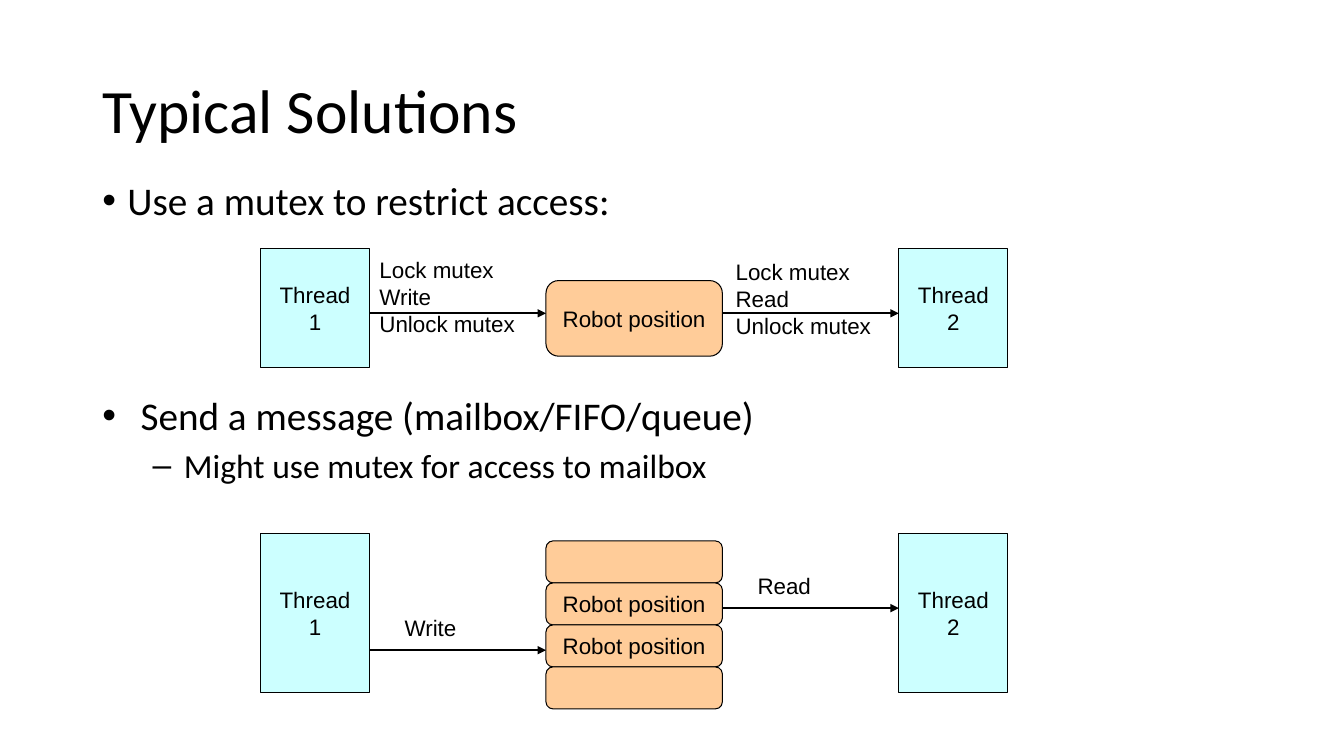
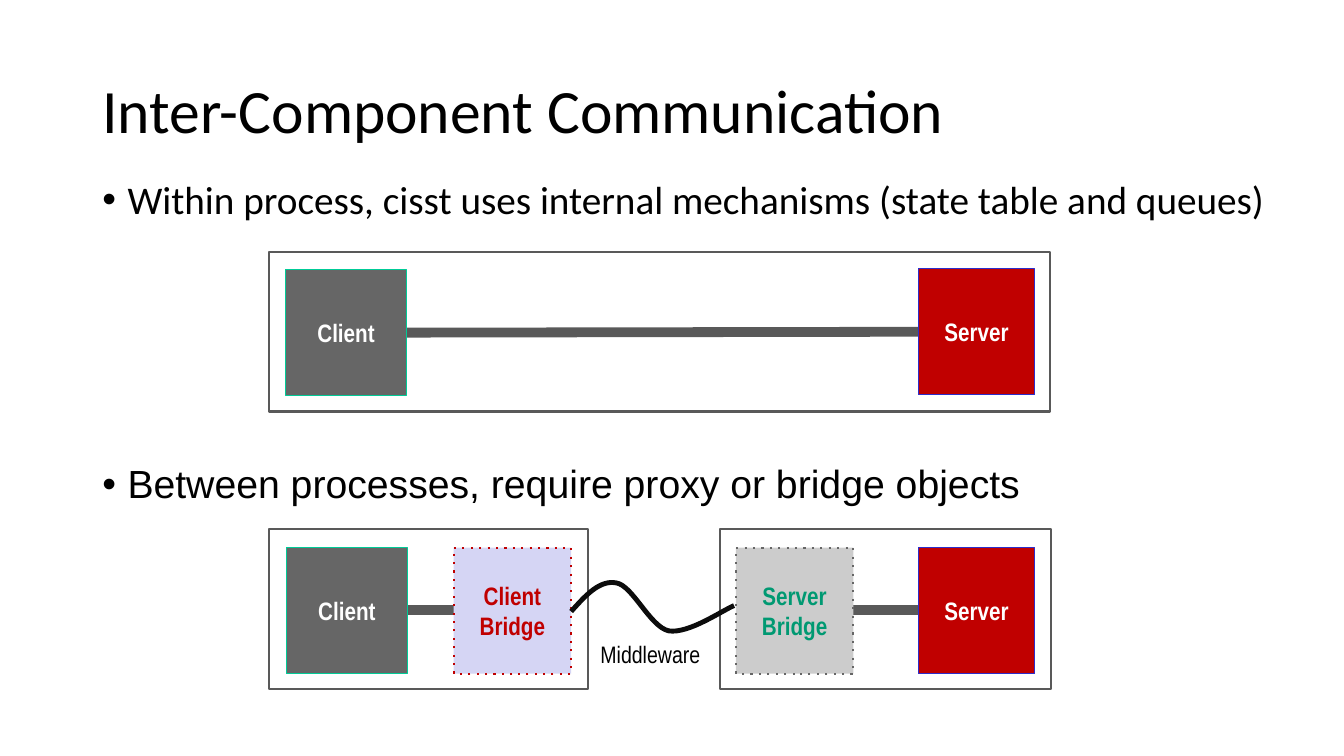
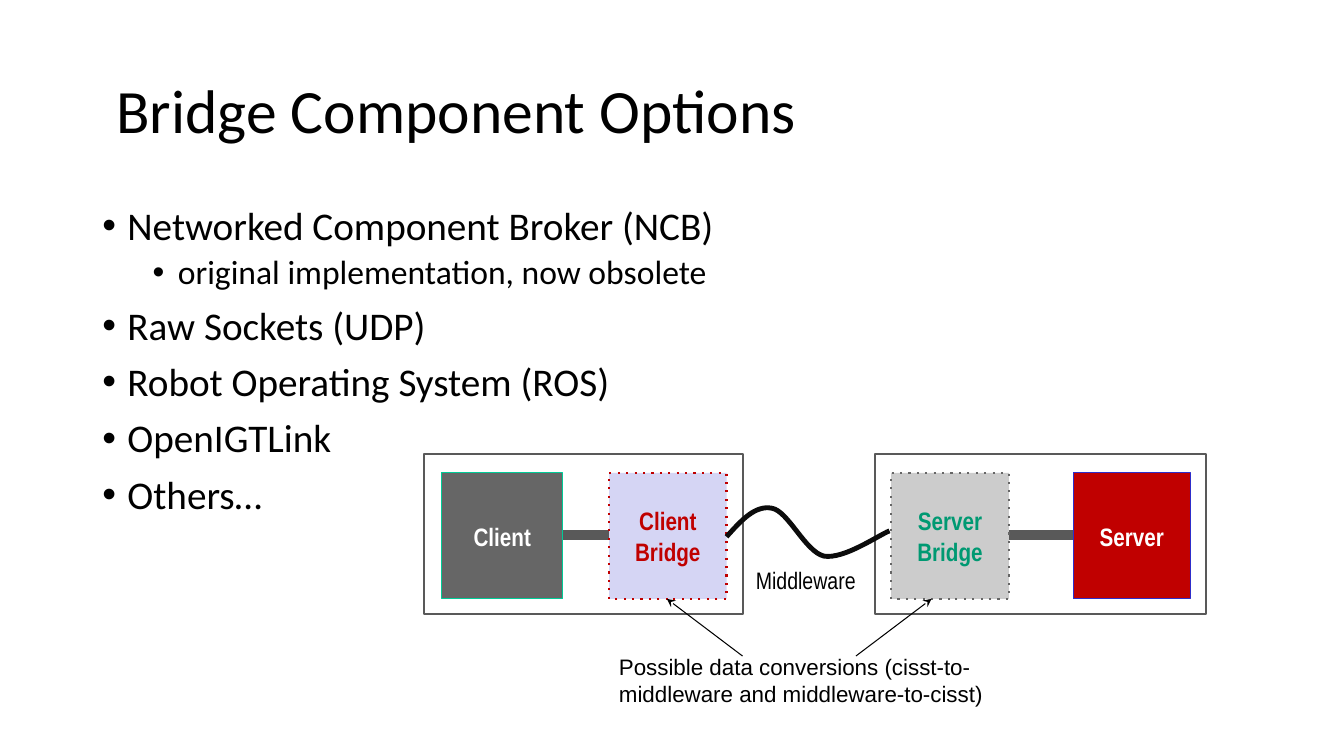
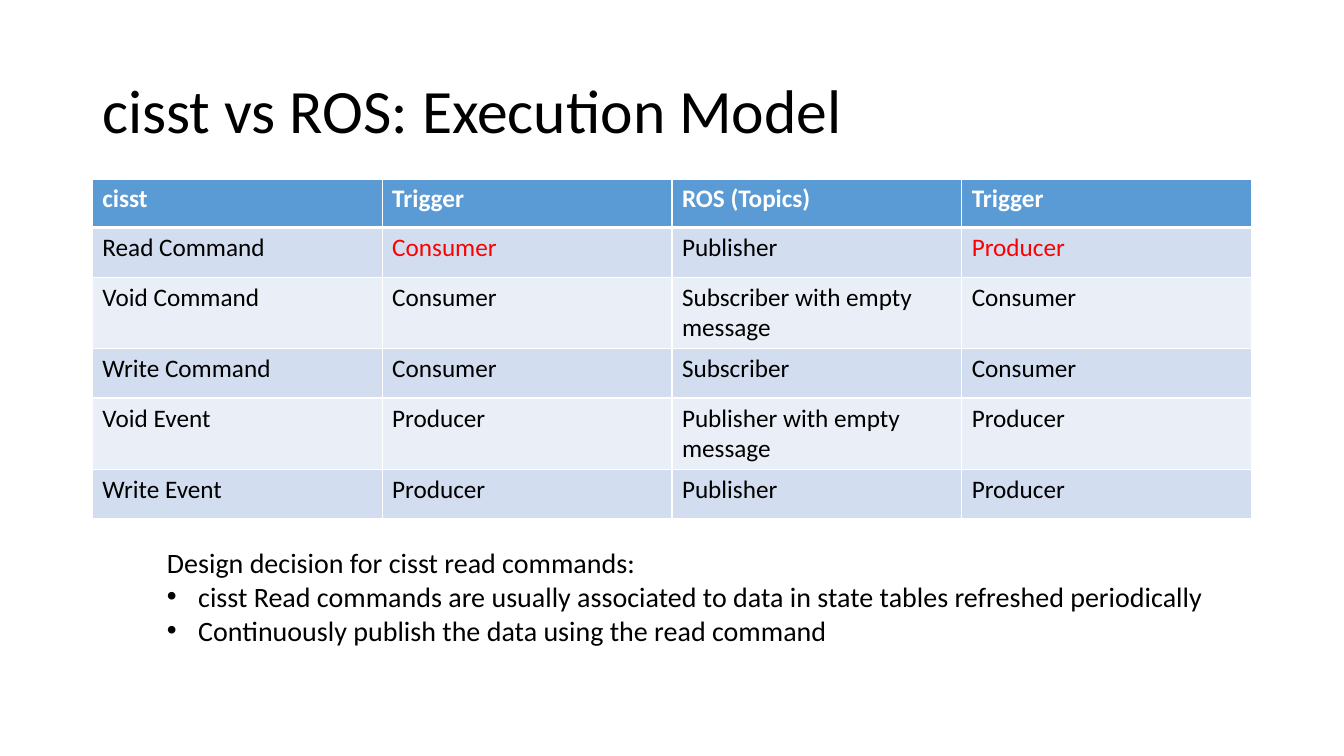
from itertools import pairwise

from lxml.etree import SubElement as Sub
from pptx import Presentation
from pptx.dml.color import RGBColor as RGB
from pptx.enum.dml import MSO_LINE as DASH
from pptx.enum.shapes import MSO_CONNECTOR as WIRE, MSO_SHAPE as FORM
from pptx.enum.text import MSO_ANCHOR as ANCHOR, PP_ALIGN as ALIGN
from pptx.oxml.ns import qn
from pptx.util import Inches, Pt

COLS, ROWS = 160, 90
UNIT = Inches(1 / 12)

HUES = {
    "ink": "000000", "paper": "FFFFFF", "aqua": "CCFFFF", "peach": "FFCC99",
    "wire": "595959", "gray": "666666", "mint": "00CB97", "red": "C00000",
    "blue": "2D2DCA", "ash": "CCCCCC", "green": "009972", "lilac": "D5D5F4",
    "curve": "0C0C0C", "head": "5B9BD5", "odd": "D2DEEF", "even": "EAEFF7",
    "alert": "FF0000",
}

FONTS = {
    "title": {"name": "Calibri", "size": Pt(44)},
    "body": {"name": "Calibri", "size": Pt(28)},
    "sub": {"name": "Calibri", "size": Pt(24)},
    "note": {"name": "Calibri", "size": Pt(20)},
    "cell": {"name": "Calibri", "size": Pt(18), "bold": False},
    "top": {"name": "Calibri", "size": Pt(18), "bold": True},
    "plain": {"name": "Arial", "size": Pt(16)},
    "wide": {"name": "Arial", "size": Pt(28)},
    "part": {"name": "Arial Narrow", "size": Pt(18), "bold": True},
    "slim": {"name": "Arial Narrow", "size": Pt(17)},
}

PARAS = {
    "none": {},
    "mid": {"alignment": ALIGN.CENTER},
    "title": {"line_spacing": 0.9},
    "body": {"line_spacing": 0.9, "space_before": Pt(10)},
    "sub": {"line_spacing": 0.9, "space_before": Pt(5)},
    "dash": {"space_before": Pt(4.8)},
    "far": {"line_spacing": 0.9, "space_before": Pt(173)},
}

KINDS = {
    "thread": (FORM.RECTANGLE, "aqua", "ink", 0.75, "plain", "ink"),
    "store": (FORM.FLOWCHART_ALTERNATE_PROCESS, "peach", "ink", 0.75, "plain", "ink"),
    "frame": (FORM.RECTANGLE, "paper", "wire", 1.5, "part", "ink"),
    "client": (FORM.RECTANGLE, "gray", "mint", 0.75, "part", "paper"),
    "server": (FORM.RECTANGLE, "red", "blue", 0.75, "part", "paper"),
    "near": (FORM.RECTANGLE, "lilac", "red", 1.5, "part", "red"),
    "away": (FORM.RECTANGLE, "ash", "gray", 1.5, "part", "green"),
}

DOTTED = ("near", "away")

WAVE = [
    [(36, 9.8), (37.7, 7.9), (39.4, 6), (41.4, 6.4)],
    [(41.4, 6.4), (43.3, 6.7), (45.4, 11.6), (47.6, 12.1)],
    [(47.6, 12.1), (50, 12.5), (54.1, 9.6), (55.4, 9.1)],
]

MODEL = [
    ("cisst", "Trigger", "ROS (Topics)", "Trigger"),
    ("Read Command", "Consumer", "Publisher", "Producer"),
    ("Void Command", "Consumer", "Subscriber with empty message", "Consumer"),
    ("Write Command", "Consumer", "Subscriber", "Consumer"),
    ("Void Event", "Producer", "Publisher with empty message", "Producer"),
    ("Write Event", "Producer", "Publisher", "Producer"),
]


def grid(*nums):
    """Turn grid counts into lengths."""
    return [round(num * UNIT) for num in nums]


def hue(name):
    """Look up a colour."""
    return RGB.from_string(HUES[name])


def fit(item, values):
    """Set each format value on an item."""
    for key, val in values.items():
        setattr(item, key, val)


def say(para, words, font, ink="ink", form="none", mark=None):
    """Write one formatted paragraph, with an optional (sign, left, hang) bullet."""
    run = para.add_run()
    run.text = words
    fit(run.font, FONTS[font])
    run.font.color.rgb = hue(ink)
    fit(para, PARAS[form])
    if mark:
        sign, left, hang = mark
        props = para._p.get_or_add_pPr()
        props.set("marL", str(Inches(left)))
        props.set("indent", str(-Inches(hang)))
        Sub(props, qn("a:buFont")).set("typeface", "Arial")
        Sub(props, qn("a:buChar")).set("char", sign)


def fill(frame, lines):
    """Fill a text frame with paragraphs."""
    frame.word_wrap = True
    for num, line in enumerate(lines):
        say(frame.add_paragraph() if num else frame.paragraphs[0], *line)


def text(page, at, lines, anchor=ANCHOR.TOP):
    """Add a text box."""
    frame = page.shapes.add_textbox(*grid(*at)).text_frame
    frame.vertical_anchor = anchor
    fill(frame, lines)


def label(page, at, words, font="plain"):
    """Add a plain label, one paragraph a line."""
    text(page, at, [(line, font) for line in words.split("\n")])


def title(page, words, left=11):
    """Add the slide title."""
    text(page, (left, 4.8, 138, 17.4), [(words, "title", "ink", "title")], ANCHOR.MIDDLE)


def box(page, kind, at, words=""):
    """Add a box of a named kind."""
    form, face, edge, width, font, ink = KINDS[kind]
    shape = page.shapes.add_shape(form, *grid(*at))
    shape.shadow.inherit = False
    shape.fill.solid()
    shape.fill.fore_color.rgb = hue(face)
    shape.line.color.rgb = hue(edge)
    shape.line.width = Pt(width)
    if kind in DOTTED:
        shape.line.dash_style = DASH.ROUND_DOT
        next(shape.element.iter(qn("a:prstDash"))).set("val", "dot")
    if words:
        shape.text_frame.vertical_anchor = ANCHOR.MIDDLE
        fill(shape.text_frame, [(line, font, ink, "mid") for line in words.split("\n")])


def wire(page, ends, ink="ink", width=1.5, tip=None):
    """Add a straight line, with an optional arrowhead."""
    line = page.shapes.add_connector(WIRE.STRAIGHT, *grid(*ends))
    line.line.color.rgb = hue(ink)
    line.line.width = Pt(width)
    props = line.element.spPr
    if tip:
        Sub(props.find(qn("a:ln")), qn("a:tailEnd")).set("type", tip)
    Sub(props, qn("a:effectLst"))


def bend(curve, share):
    """Find the point at a share of a cubic curve."""
    while len(curve) > 1:
        curve = [
            tuple(a + (b - a) * share for a, b in zip(start, end))
            for start, end in pairwise(curve)
        ]
    return curve[0]


def wave(page, left, top, steps=16):
    """Draw the middleware curve."""
    dots = [
        grid(left + x, top + y)
        for curve in WAVE
        for x, y in (bend(curve, num / steps) for num in range(steps + 1))
    ]
    pen = page.shapes.build_freeform(*dots[0])
    pen.add_line_segments(dots[1:], close=False)
    shape = pen.convert_to_shape()
    shape.shadow.inherit = False
    shape.fill.background()
    shape.line.color.rgb = hue("curve")
    shape.line.width = Pt(3.5)


def link(page, left, top):
    """Draw a client and a server joined by bridges."""
    mid, row = top + 9.6, top + 2.2
    box(page, "frame", (left, top, 38, 19))
    box(page, "frame", (left + 53.7, top, 39.4, 19))
    for start, end in ((16.5, 22), (69.6, 77.3)):
        wire(page, (left + start, mid, left + end, mid), "wire", 7)
    for kind, x, width, words in (
        ("client", 2.1, 14.4, "Client"),
        ("near", 22, 14, "Client\nBridge"),
        ("away", 55.6, 14, "Server\nBridge"),
        ("server", 77.3, 13.9, "Server"),
    ):
        box(page, kind, (left + x, row, width, 15), words)
    wave(page, left, top)
    label(page, (left + 38.3, top + 12.6, 17.6, 4.7), "Middleware", "slim")


def pair(page, top, high):
    """Draw the two threads."""
    for num, left in enumerate((31, 107), 1):
        box(page, "thread", (left, top, 13, high), f"Thread {num}")


def edges(cell, low):
    """Draw the white borders of a cell."""
    props = cell._tc.get_or_add_tcPr()
    for side, width in (("L", 1), ("R", 1), ("T", 1), ("B", low)):
        line = Sub(props, qn(f"a:ln{side}"), w=str(Pt(width)))
        Sub(Sub(line, qn("a:solidFill")), qn("a:srgbClr")).set("val", HUES["paper"])


def table(page, at, rows, highs):
    """Add the table with a head row and bands."""
    grille = page.shapes.add_table(len(rows), len(rows[0]), *grid(*at)).table
    grille.horz_banding = False
    for num, (row, high) in enumerate(zip(rows, highs)):
        grille.rows[num].height = grid(high)[0]
        band = "head" if num == 0 else "odd" if num % 2 else "even"
        for col, words in enumerate(row):
            cell = grille.cell(num, col)
            edges(cell, 1 if num else 3)
            cell.fill.solid()
            cell.fill.fore_color.rgb = hue(band)
            ink = "ink" if num else "paper"
            if num == 1 and col % 2:
                ink = "alert"
            fill(cell.text_frame, [(words, "cell" if num else "top", ink)])


def point(words, font="body", form="body"):
    """Describe a main bullet."""
    return words, font, "ink", form, ("•", 0.25, 0.25)


def mutex(page):
    """Build the slide on sharing data between threads."""
    title(page, "Typical Solutions")
    text(page, (11, 21, 138, 8.2), [point("Use a mutex to restrict access:")])
    pair(page, 29.6, 14.2)
    box(page, "store", (65, 33.4, 21, 9), "Robot position")
    label(page, (44, 29.9, 24, 12), "Lock mutex\nWrite\nUnlock mutex")
    label(page, (86.4, 30.2, 24, 12), "Lock mutex\nRead\nUnlock mutex")
    text(page, (11, 46, 120, 12), [
        ("Send a message (mailbox/FIFO/queue)", "body", "ink", "none", ("•", 0.38, 0.38)),
        ("Might use mutex for access to mailbox", "sub", "ink", "dash", ("–", 0.81, 0.31)),
    ])
    pair(page, 63.5, 19)
    for num, words in enumerate(("", "Robot position", "Robot position", "")):
        box(page, "store", (65, 64.4 + 5 * num, 21, 5), words)
    for left, top in ((44, 37.3), (86, 37.3), (44, 77.4), (86, 72.4)):
        wire(page, (left, top, left + 21, top), tip="triangle")
    label(page, (47, 72.5, 14, 4.8), "Write")
    label(page, (89, 67.5, 15, 4.8), "Read")


def comms(page):
    """Build the slide on links within and between processes."""
    title(page, "Inter-Component Communication")
    text(page, (11, 20.9, 143.2, 57), [
        point("Within process, cisst uses internal mechanisms (state table and queues)"),
        point("Between processes, require proxy or bridge objects", "wide", "far"),
    ])
    box(page, "frame", (32, 30, 93, 19))
    wire(page, (48.4, 39.6, 109.3, 39.5), "wire", 7)
    box(page, "client", (34, 32.1, 14.4, 15), "Client")
    box(page, "server", (109.3, 32, 13.9, 15), "Server")
    link(page, 32, 63)


def bridge(page):
    """Build the slide on bridge options."""
    title(page, "Bridge Component Options", 12.7)
    text(page, (11, 24, 138, 57), [
        point("Networked Component Broker (NCB)"),
        ("original implementation, now obsolete", "sub", "ink", "sub", ("•", 0.75, 0.25)),
        point("Raw Sockets (UDP)"),
        point("Robot Operating System (ROS)"),
        point("OpenIGTLink"),
        point("Others…"),
    ])
    link(page, 50.5, 54.1)
    label(page, (72.5, 77.2, 46.4, 7.7),
          "Possible data conversions (cisst-to-middleware and middleware-to-cisst)")
    for start, end in ((88.4, 79.4), (101.9, 110.9)):
        wire(page, (start, 78.1, end, 71.3), width=0.75, tip="stealth")


def model(page):
    """Build the slide that compares execution models."""
    title(page, "cisst vs ROS: Execution Model")
    table(page, (11, 21.3, 138, 40.4), MODEL, (5.8, 5.9, 8.5, 5.9, 8.5, 5.9))
    mark = ("•", 0.31, 0.31)
    text(page, (18.7, 64.4, 127, 13.3), [
        ("Design decision for cisst read commands:", "note"),
        ("cisst Read commands are usually associated to data in state tables"
         " refreshed periodically", "note", "ink", "none", mark),
        ("Continuously publish the data using the read command",
         "note", "ink", "none", mark),
    ])


def main():
    """Build and save the deck."""
    deck = Presentation()
    deck.slide_width, deck.slide_height = grid(COLS, ROWS)
    for build in (mutex, comms, bridge, model):
        build(deck.slides.add_slide(deck.slide_layouts[6]))
    deck.save("out.pptx")


if __name__ == "__main__":
    main()
